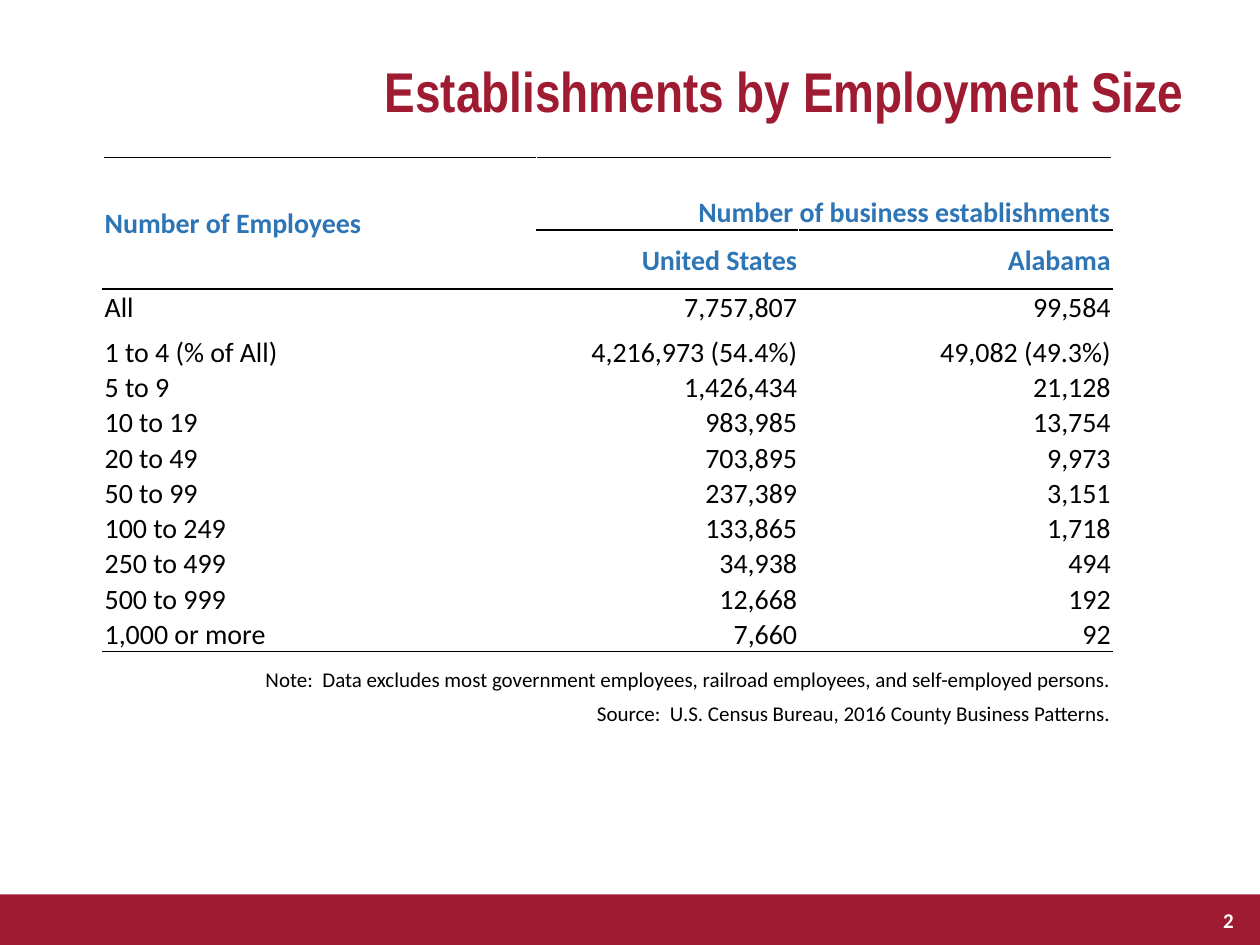
"""Build a slide tabulating business establishments by employment size."""
from dataclasses import dataclass

from lxml import etree
from pptx import Presentation
from pptx import util as u
from pptx.dml.color import RGBColor
from pptx.enum import shapes, text
from pptx.oxml import ns

CRIMSON = RGBColor(0x9E, 0x1B, 0x32)
HEADING_BLUE = RGBColor(0x2E, 0x75, 0xB6)
BLACK = RGBColor(0, 0, 0)
WHITE = RGBColor(0xFF, 0xFF, 0xFF)
LEFT, RIGHT = text.PP_ALIGN.LEFT, text.PP_ALIGN.RIGHT
TOP, MIDDLE, BOTTOM = text.MSO_ANCHOR.TOP, text.MSO_ANCHOR.MIDDLE, text.MSO_ANCHOR.BOTTOM

HEADING = {"name": "Calibri", "size": u.Pt(16), "bold": True, "color": HEADING_BLUE}
FIGURE = {**HEADING, "bold": False, "color": BLACK}
FOOTNOTE = {**FIGURE, "size": u.Pt(12)}
TITLE = {"name": "Arial Narrow", "size": u.Pt(32), "bold": True, "color": CRIMSON}
PAGE = {**FOOTNOTE, "bold": True, "color": WHITE}


@dataclass(frozen=True)
class Label:
    wording: str
    left: float
    top: float
    width: float
    height: float
    style: dict
    anchor: text.MSO_ANCHOR
    line_spacing: float = 1.0


@dataclass(frozen=True)
class Row:
    cells: tuple
    height: float = 0.71
    style: dict = None
    anchor: text.MSO_ANCHOR = BOTTOM
    rules: tuple = ()


LABELS = (
    Label("2", 24.05, 18.03, 1.07, 1.02, PAGE, MIDDLE),
    Label("Establishments by Employment Size", 1.27, 1.17, 22.86, 1.45, TITLE, TOP, 0.9),
)
COLUMN_WIDTHS = (8.74, 5.28, 6.32)
ROWS = (
    Row(("Number of Employees", "Number of business establishments", ""), 1.47, HEADING,
        rules=("lnT", "lnB")),
    Row(("", "United States", "Alabama"), 1.19, HEADING, MIDDLE, ("lnT", "lnB")),
    Row(("All", "7,757,807", "99,584"), rules=("lnT",)),
    Row(("1 to 4 (% of All)", "4,216,973 (54.4%)", "49,082 (49.3%)"), 0.91),
    Row(("5 to 9", "1,426,434", "21,128")),
    Row(("10 to 19", "983,985", "13,754")),
    Row(("20 to 49", "703,895", "9,973")),
    Row(("50 to 99", "237,389", "3,151")),
    Row(("100 to 249", "133,865", "1,718")),
    Row(("250 to 499", "34,938", "494")),
    Row(("500 to 999", "12,668", "192")),
    Row(("1,000 or more", "7,660", "92"), rules=("lnB",)),
    Row(("Note:  Data excludes most government employees, railroad employees, "
         "and self-employed persons.", "", ""), 0.84, FOOTNOTE, rules=("lnT",)),
    Row(("Source:  U.S. Census Bureau, 2016 County Business Patterns.", "", ""), 0.69, FOOTNOTE),
)
MERGES = (((0, 0), (1, 0)), ((0, 1), (0, 2)), ((12, 0), (12, 2)), ((13, 0), (13, 2)))


def write(paragraph, wording: str, style: dict, align) -> None:
    """Add one formatted run to a paragraph."""
    paragraph.alignment = align
    run = paragraph.add_run()
    run.text = wording
    for key, value in style.items():
        if key == "color":
            run.font.color.rgb = value
        else:
            setattr(run.font, key, value)


def add_label(slide, label: Label) -> None:
    """Place a right-aligned text box."""
    box = slide.shapes.add_textbox(
        *map(u.Cm, (label.left, label.top, label.width, label.height)))
    frame = box.text_frame
    frame.word_wrap = True
    frame.vertical_anchor = label.anchor
    frame.paragraphs[0].line_spacing = label.line_spacing
    write(frame.paragraphs[0], label.wording, label.style, RIGHT)


def add_rule(cell, side: str) -> None:
    """Draw a black one-point border on one side of a cell."""
    border = etree.SubElement(cell._tc.get_or_add_tcPr(), ns.qn(f"a:{side}"), w=str(u.Pt(1)))
    fill = etree.SubElement(border, ns.qn("a:solidFill"))
    etree.SubElement(fill, ns.qn("a:srgbClr"), val=str(BLACK))


def fill_row(table, index: int, row: Row) -> None:
    """Write and format the cells of one table row."""
    table.rows[index].height = u.Cm(row.height)
    style = row.style or FIGURE
    for column, wording in enumerate(row.cells):
        cell = table.cell(index, column)
        spans_header = (index, column) == (0, 0)
        layout = {
            "margin_left": u.Cm(0.03), "margin_right": u.Cm(0.03),
            "margin_top": u.Cm(0.03), "margin_bottom": 0,
            "vertical_anchor": MIDDLE if spans_header else row.anchor,
        }
        for key, value in layout.items():
            setattr(cell, key, value)
        for side in row.rules:
            if not (column == 0 and (index, side) in ((0, "lnB"), (1, "lnT"))):
                add_rule(cell, side)
        cell.fill.background()
        if wording:
            align = LEFT if column == 0 and style is not FOOTNOTE else RIGHT
            write(cell.text_frame.paragraphs[0], wording, style, align)


def add_establishments(slide) -> None:
    """Add the establishments table."""
    table = slide.shapes.add_table(
        len(ROWS), len(COLUMN_WIDTHS), u.Cm(2.08), u.Cm(3.17),
        u.Cm(sum(COLUMN_WIDTHS)), u.Cm(sum(row.height for row in ROWS))).table
    table.first_row = table.horz_banding = False
    for column, width in zip(table.columns, COLUMN_WIDTHS):
        column.width = u.Cm(width)
    for first, last in MERGES:
        table.cell(*first).merge(table.cell(*last))
    for index, row in enumerate(ROWS):
        fill_row(table, index, row)


def main() -> None:
    """Assemble and save the slide."""
    deck = Presentation()
    deck.slide_width, deck.slide_height = u.Cm(25.4), u.Cm(19.05)
    slide = deck.slides.add_slide(deck.slide_layouts[6])
    footer = slide.shapes.add_shape(
        shapes.MSO_SHAPE.RECTANGLE, 0, u.Cm(18.03), u.Cm(25.4), u.Cm(1.02))
    footer.shadow.inherit = False
    footer.fill.solid()
    footer.fill.fore_color.rgb = CRIMSON
    footer.line.fill.background()
    for label in LABELS:
        add_label(slide, label)
    add_establishments(slide)
    deck.save("out.pptx")


if __name__ == "__main__":
    main()
